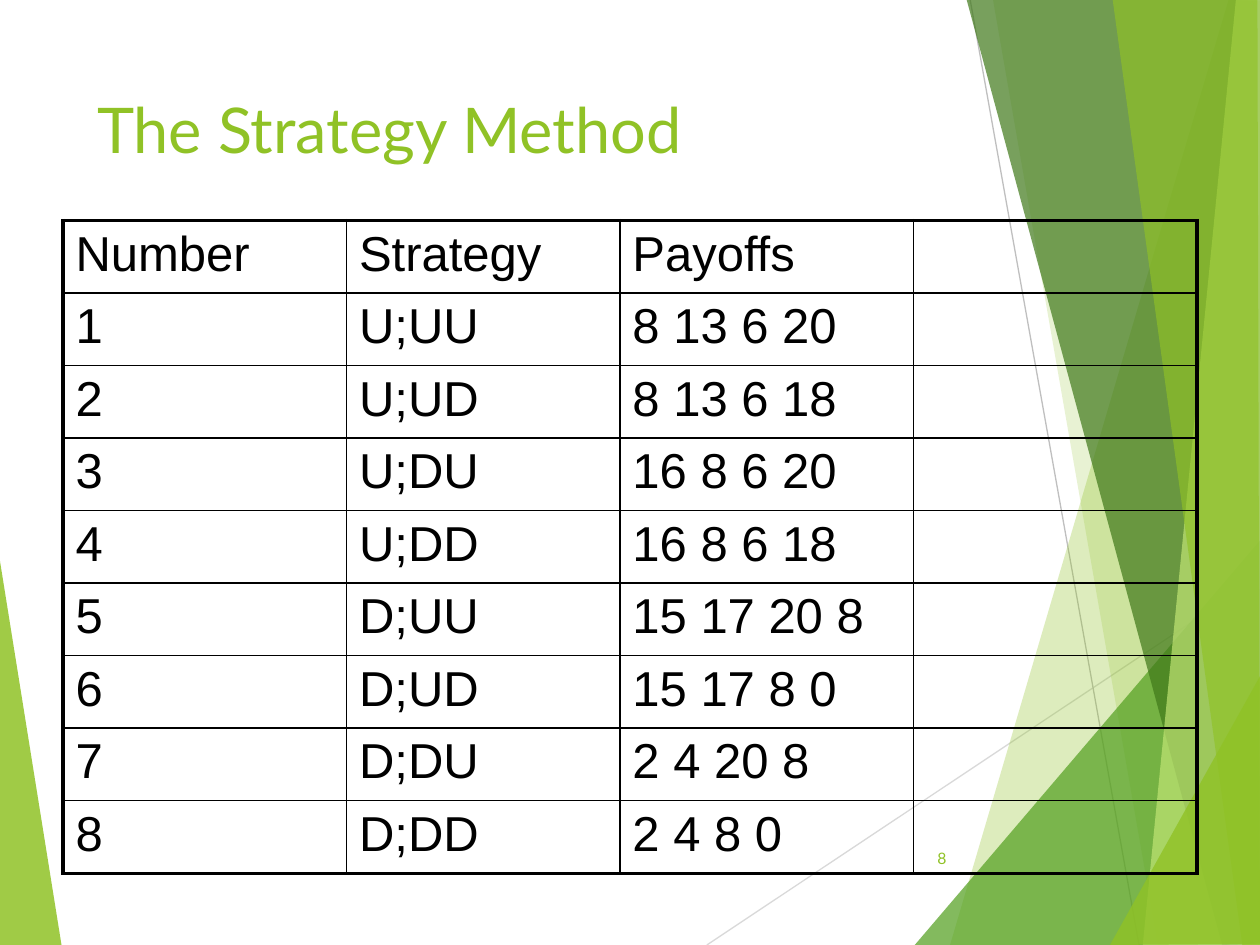
import pptx
import pptx.util
import pptx.dml.color
import pptx.enum.shapes
import pptx.enum.text
import pptx.oxml
import pptx.oxml.ns

Inches, Pt = pptx.util.Inches, pptx.util.Pt
RGBColor = pptx.dml.color.RGBColor
Align, Anchor = pptx.enum.text.PP_ALIGN, pptx.enum.text.MSO_ANCHOR

LIME = RGBColor(0x90, 0xC2, 0x26)
GREEN = RGBColor(0x54, 0xA0, 0x21)
DARK = RGBColor(0x3F, 0x78, 0x19)
PALE = RGBColor(0xC0, 0xE4, 0x74)
SILVER = RGBColor(0xD9, 0xD9, 0xD9)
GREY = RGBColor(0xBF, 0xBF, 0xBF)
BLACK = RGBColor(0, 0, 0)

# Corners in inches, colour, opacity in percent
SHARDS = [
    ([(-0.01, 4.39), (0.49, 7.51), (-0.01, 7.5)], LIME, 85),
    ([(9.75, 0), (7.54, 7.5), (10.02, 7.51), (10.01, 0.01)], LIME, 30),
    ([(7.88, -0.01), (9.19, 7.5), (10.01, 7.5), (10.01, -0.01)], LIME, 20),
    ([(7.26, 7.5), (10, 4.29), (10.01, 7.5)], GREEN, 72),
    ([(7.67, -0.01), (9.7, 7.5), (10.01, 7.49), (10.01, -0.01)], DARK, 70),
    ([(9.81, -0.01), (9.07, 7.5), (10.01, 7.5), (10, -0.01)], PALE, 70),
    ([(8.83, -0.01), (9.86, 7.5), (10, 7.5), (9.98, -0.01)], LIME, 65),
    ([(8.81, 7.5), (10.01, 5.35), (10.01, 7.49)], LIME, 80),
]
RAYS = [((5.61, 7.5), (10.01, 4.57), SILVER), ((7.7, 0), (9.04, 7.5), GREY)]

ROWS = [
    ("Number", "Strategy", "Payoffs", ""),
    ("1", "U;UU", "8 13 6 20", ""),
    ("2", "U;UD", "8 13 6 18", ""),
    ("3", "U;DU", "16 8 6 20", ""),
    ("4", "U;DD", "16 8 6 18", ""),
    ("5", "D;UU", "15 17 20 8", ""),
    ("6", "D;UD", "15 17 8 0", ""),
    ("7", "D;DU", "2 4 20 8", ""),
    ("8", "D;DD", "2 4 8 0", ""),
]
WIDTHS = [2.25, 2.17, 2.33, 2.25]


def add_run(para, text, font, size, color):
    run = para.add_run()
    run.text = text
    run.font.name, run.font.size = font, Pt(size)
    run.font.color.rgb = color


def add_shard(slide, left, top, points, color, alpha):
    spots = [(Inches(left + x), Inches(top + y)) for x, y in points]
    pen = slide.shapes.build_freeform(*spots[0])
    pen.add_line_segments(spots[1:], close=True)
    shape = pen.convert_to_shape()
    shape.shadow.inherit = False
    shape.line.fill.background()
    shape.fill.solid()
    shape.fill.fore_color.rgb = color
    tint = shape.fill._xPr.find(".//" + pptx.oxml.ns.qn("a:srgbClr"))
    node = pptx.oxml.parse_xml(
        f'<a:alpha {pptx.oxml.ns.nsdecls("a")} val="{alpha * 1000}"/>')
    tint.append(node)


def add_ray(slide, left, top, start, end, color):
    line = slide.shapes.add_connector(
        pptx.enum.shapes.MSO_CONNECTOR.STRAIGHT,
        Inches(left + start[0]), Inches(top + start[1]),
        Inches(left + end[0]), Inches(top + end[1]))
    line.line.color.rgb = color
    line.line.width = Pt(0.75)
    line._element.spPr.append(pptx.oxml.parse_xml(
        f'<a:effectLst {pptx.oxml.ns.nsdecls("a")}/>'))


def add_decor(slide, left, top):
    """Draw the left shard, the thin rays, then the shards on the right."""
    add_shard(slide, left, top, *SHARDS[0])
    for ray in RAYS:
        add_ray(slide, left, top, *ray)
    for shard in SHARDS[1:]:
        add_shard(slide, left, top, *shard)


def add_title(slide, left, top, width, height):
    title = slide.shapes.title
    title.left, title.top = Inches(left), Inches(top)
    title.width, title.height = Inches(width), Inches(height)
    frame = title.text_frame
    frame.vertical_anchor = Anchor.TOP
    para = frame.paragraphs[0]
    para.alignment = Align.LEFT
    add_run(para, "The Strategy Method", "Lato", 36, LIME)
    slide.shapes._spTree.append(title._element)


def set_edges(cell, widths):
    """Set the left, right, top and bottom borders, in points."""
    props = cell._tc.get_or_add_tcPr()
    for i, (side, width) in enumerate(zip("LRTB", widths)):
        props.insert(i, pptx.oxml.parse_xml(
            f'<a:ln{side} {pptx.oxml.ns.nsdecls("a")} w="{Pt(width)}">'
            f'<a:solidFill><a:srgbClr val="{BLACK}"/></a:solidFill>'
            f'</a:ln{side}>'))


def add_grid(slide, left, top, width, height):
    frame = slide.shapes.add_table(
        len(ROWS), len(WIDTHS),
        Inches(left), Inches(top), Inches(width), Inches(height))
    table = frame.table
    table.first_row = table.horz_banding = False
    for col, size in zip(table.columns, WIDTHS):
        col.width = Inches(size * width / sum(WIDTHS))
    for r, row in enumerate(ROWS):
        table.rows[r].height = Inches(height / len(ROWS))
        for c, text in enumerate(row):
            cell = table.cell(r, c)
            cell.fill.background()
            outer = (c == 0, c == len(row) - 1, r == 0, r == len(ROWS) - 1)
            set_edges(cell, [2.25 if edge else 1 for edge in outer])
            para = cell.text_frame.paragraphs[0]
            if text:
                add_run(para, text, "Arial", 28, BLACK)
            else:
                para.font.size = Pt(28)


def add_number(slide, left, top, width, height):
    box = slide.shapes.add_textbox(
        Inches(left), Inches(top), Inches(width), Inches(height))
    frame = box.text_frame
    frame.word_wrap = True
    frame.vertical_anchor = Anchor.MIDDLE
    para = frame.paragraphs[0]
    para.alignment = Align.RIGHT
    add_run(para, "8", "Lato", 9, LIME)


def main():
    deck = pptx.Presentation()
    deck.slide_width, deck.slide_height = Inches(10), Inches(7.5)
    slide = deck.slides.add_slide(deck.slide_layouts[5])
    add_decor(slide, 0, 0)
    add_title(slide, 0.67, 0.67, 6.94, 1.44)
    add_grid(slide, 0.5, 1.75, 9, 5.1)
    add_number(slide, 7.05, 6.61, 0.56, 0.4)
    deck.save("out.pptx")


if __name__ == "__main__":
    main()
